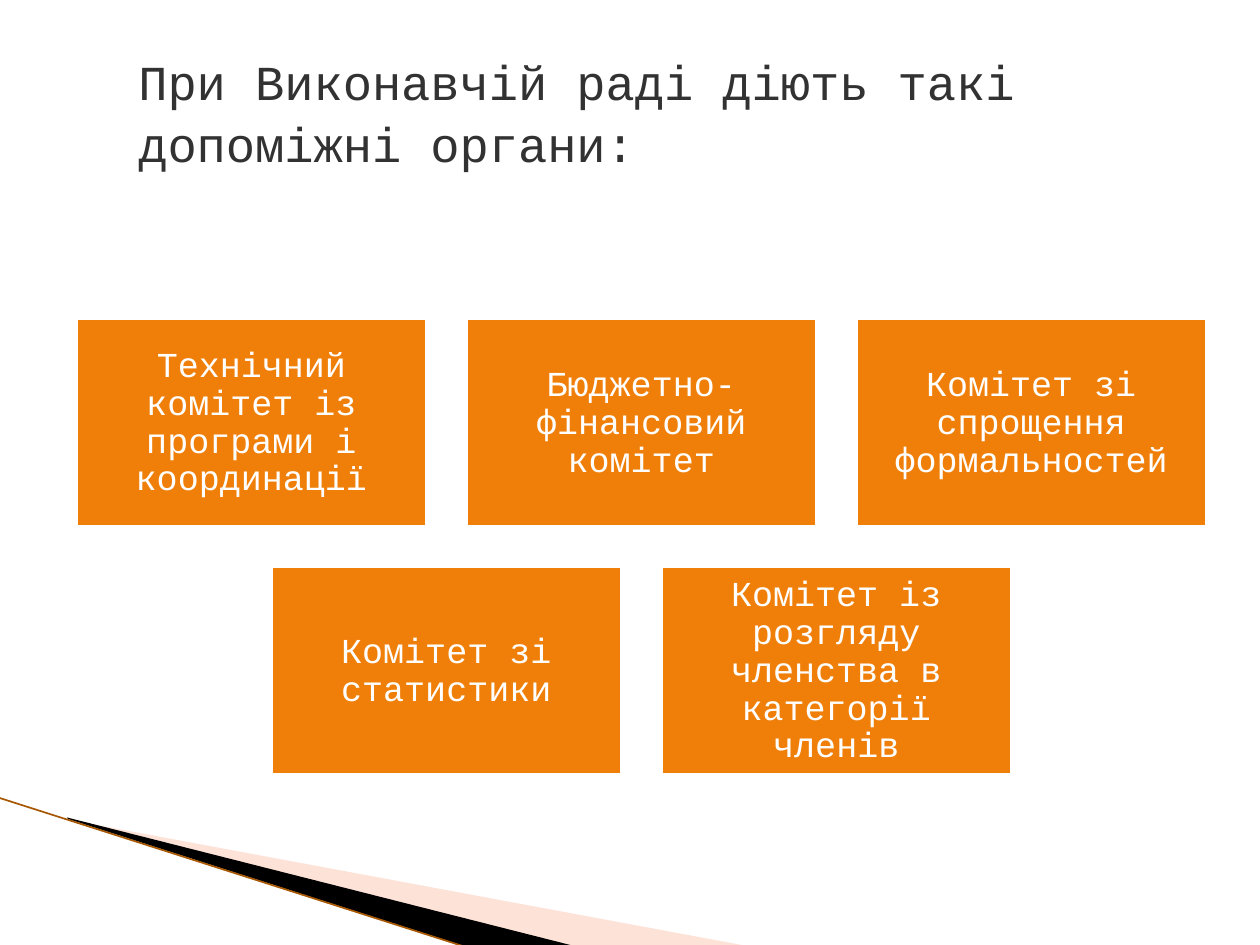
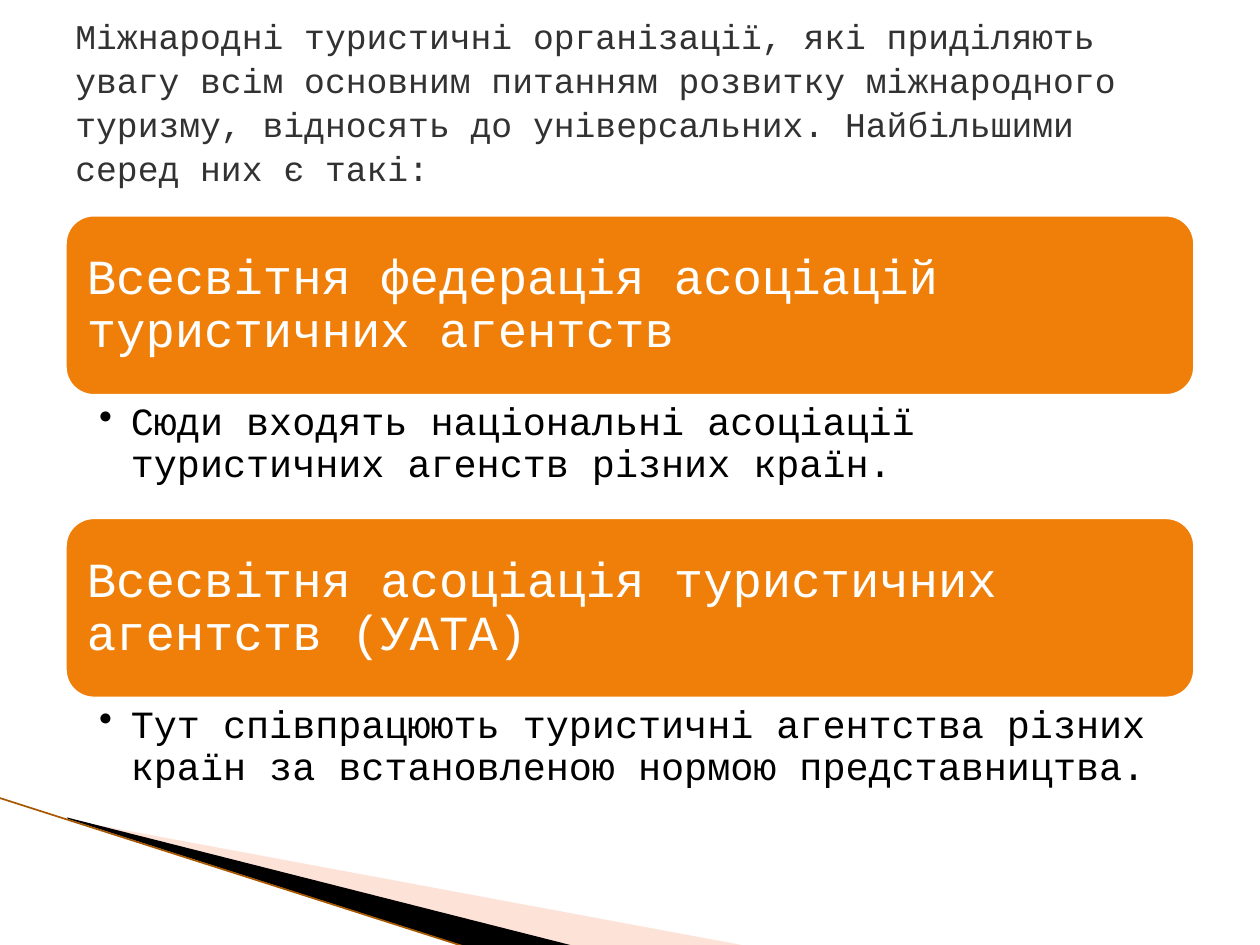
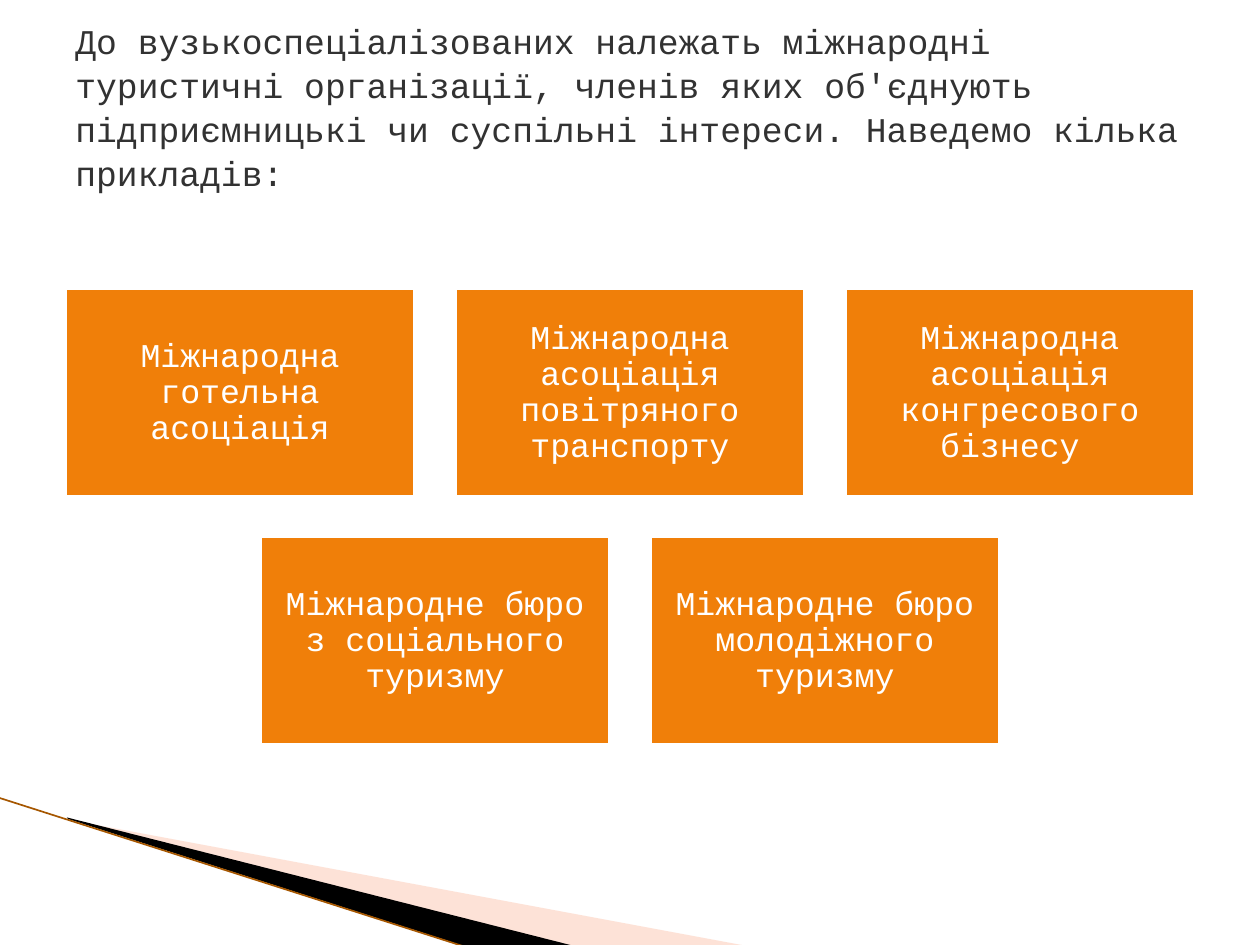
from lxml import etree
from pptx import Presentation
from pptx.dml.color import RGBColor
from pptx.enum.shapes import MSO_CONNECTOR, MSO_SHAPE
from pptx.enum.text import MSO_ANCHOR, PP_ALIGN
from pptx.oxml.ns import qn
from pptx.util import Cm, Pt

RECTANGLE = MSO_SHAPE.RECTANGLE
ROUNDED = MSO_SHAPE.ROUNDED_RECTANGLE
STRAIGHT = MSO_CONNECTOR.STRAIGHT
TOP, MIDDLE = MSO_ANCHOR.TOP, MSO_ANCHOR.MIDDLE
LEFT, CENTER = PP_ALIGN.LEFT, PP_ALIGN.CENTER

FONT = "Courier New"
COLORS = {
    "orange": "F07F09",
    "white": "FFFFFF",
    "black": "000000",
    "title": "323232",
    "pink": "FCB79B",
    "brown": "A65700",
}
COLORS = {name: RGBColor.from_string(value) for name, value in COLORS.items()}

BANDS = [
    ("pink", [(1.4, 16.53), (15.11, 19.08), (11.58, 19.08), (1.4, 16.51)]),
    ("black", [(1.35, 16.48), (11.61, 19.08), (9.45, 19.1), (1.37, 16.51)]),
]
CARD_WIDTH, CARD_HEIGHT = 7.14, 4.29
COLUMN_STEP, ROW_STEP = 7.86, 5
PER_ROW = 3
PANEL_LEFT, PANEL_WIDTH = 1.27, 22.86
PANEL_TOP, PANEL_HEIGHT, PANEL_STEP = 4.29, 3.73, 6.1
DETAIL_HEIGHT = 2.37

PAGES = [
    {
        "title": "При Виконавчій раді діють такі допоміжні органи:",
        "title_place": (2.54, 0.64, 22.86, 3.18),
        "title_size": 27.9,
        "card_start": (1.5, 6.38),
        "card_size": 20,
        "cards": [
            "Технічний комітет із програми і координації",
            "Бюджетно-фінансовий комітет",
            "Комітет зі спрощення формальностей",
            "Комітет зі статистики",
            "Комітет із розгляду членства в категорії членів",
        ],
    },
    {
        "title": "Міжнародні туристичні організації, які приділяють увагу всім "
                 "основним питанням розвитку міжнародного туризму, відносять до "
                 "універсальних. Найбільшими серед них є такі:",
        "title_place": (1.27, 0.23, 22.86, 3.6),
        "title_size": 19.8,
        "panels": [
            ("Всесвітня федерація асоціацій туристичних агентств",
             "Сюди входять національні асоціації туристичних агенств різних країн."),
            ("Всесвітня асоціація туристичних агентств (УАТА)",
             "Тут співпрацюють туристичні агентства різних країн за встановленою "
             "нормою представництва."),
        ],
    },
    {
        "title": "До вузькоспеціалізованих належать міжнародні туристичні "
                 "організації, членів яких об'єднують підприємницькі чи суспільні "
                 "інтереси. Наведемо кілька прикладів:",
        "title_place": (1.27, 0.33, 22.86, 3.6),
        "title_size": 19.8,
        "card_start": (1.27, 5.77),
        "card_size": 19,
        "cards": [
            "Міжнародна готельна асоціація",
            "Міжнародна асоціація повітряного транспорту",
            "Міжнародна асоціація конгресового бізнесу ",
            "Міжнародне бюро з соціального туризму",
            "Міжнародне бюро молодіжного туризму",
        ],
    },
]


def write(box, text, size, color, insets, spacing, align=LEFT, anchor=MIDDLE, bullet=False):
    frame = box.text_frame
    frame.word_wrap = True
    frame.vertical_anchor = anchor
    frame.margin_left, frame.margin_top, frame.margin_right, frame.margin_bottom = map(Cm, insets)
    para = frame.paragraphs[0]
    para.text = text
    para.alignment = align
    para.line_spacing = spacing
    if bullet:
        properties = para._p.get_or_add_pPr()
        properties.set("marL", str(Cm(0.64)))
        properties.set("indent", str(-Cm(0.64)))
        etree.SubElement(properties, qn("a:buChar")).set("char", "•")
    para.font.name = FONT
    para.font.size = Pt(size)
    para.font.color.rgb = COLORS[color]


def add_block(page, kind, place, text, size, inset, align):
    block = page.shapes.add_shape(kind, *map(Cm, place))
    block.shadow.inherit = False
    block.fill.solid()
    block.fill.fore_color.rgb = COLORS["orange"]
    block.line.color.rgb = COLORS["white"]
    block.line.width = Pt(4.33)
    write(block, text, size, "white", [inset] * 4, 0.9, align)


deck = Presentation()
deck.slide_width, deck.slide_height = Cm(25.4), Cm(19.05)

for content in PAGES:
    page = deck.slides.add_slide(deck.slide_layouts[6])

    for color, points in BANDS:
        corners = [(Cm(x), Cm(y)) for x, y in points]
        builder = page.shapes.build_freeform(*corners[0])
        builder.add_line_segments(corners[1:])
        band = builder.convert_to_shape()
        band.shadow.inherit = False
        band.fill.solid()
        band.fill.fore_color.rgb = COLORS[color]
        band.line.fill.background()
        if color == "pink":
            tint = band._element.spPr.find(qn("a:solidFill"))[0]
            etree.SubElement(tint, qn("a:alpha")).set("val", "40000")

    edge = page.shapes.add_connector(STRAIGHT, Cm(-0.03), Cm(16.08), Cm(9.42), Cm(19.1))
    edge.line.color.rgb = COLORS["brown"]
    edge.line.width = Pt(0.95)
    etree.SubElement(edge._element.spPr, qn("a:effectLst"))

    title = page.shapes.add_textbox(*map(Cm, content["title_place"]))
    write(title, content["title"], content["title_size"], "title",
          (0.25, 0.13, 0.25, 0.13), 1.06)

    cards = content.get("cards", [])
    for index, text in enumerate(cards):
        row, column = divmod(index, PER_ROW)
        in_row = min(PER_ROW, len(cards) - row * PER_ROW)
        start_left, start_top = content["card_start"]
        left = start_left + (column + (PER_ROW - in_row) / 2) * COLUMN_STEP
        top = start_top + row * ROW_STEP
        add_block(page, RECTANGLE, (left, top, CARD_WIDTH, CARD_HEIGHT),
                  text, content["card_size"], 0.2, CENTER)

    for index, (heading, detail) in enumerate(content.get("panels", [])):
        top = PANEL_TOP + index * PANEL_STEP
        add_block(page, ROUNDED, (PANEL_LEFT, top, PANEL_WIDTH, PANEL_HEIGHT),
                  heading, 28, 0.3, LEFT)
        note = page.shapes.add_textbox(Cm(PANEL_LEFT), Cm(top + PANEL_HEIGHT),
                                       Cm(PANEL_WIDTH), Cm(DETAIL_HEIGHT))
        write(note, detail, 22, "black", (0.73, 0.1, 0.56, 0.1), 0.9,
              anchor=TOP, bullet=True)

deck.save("out.pptx")
